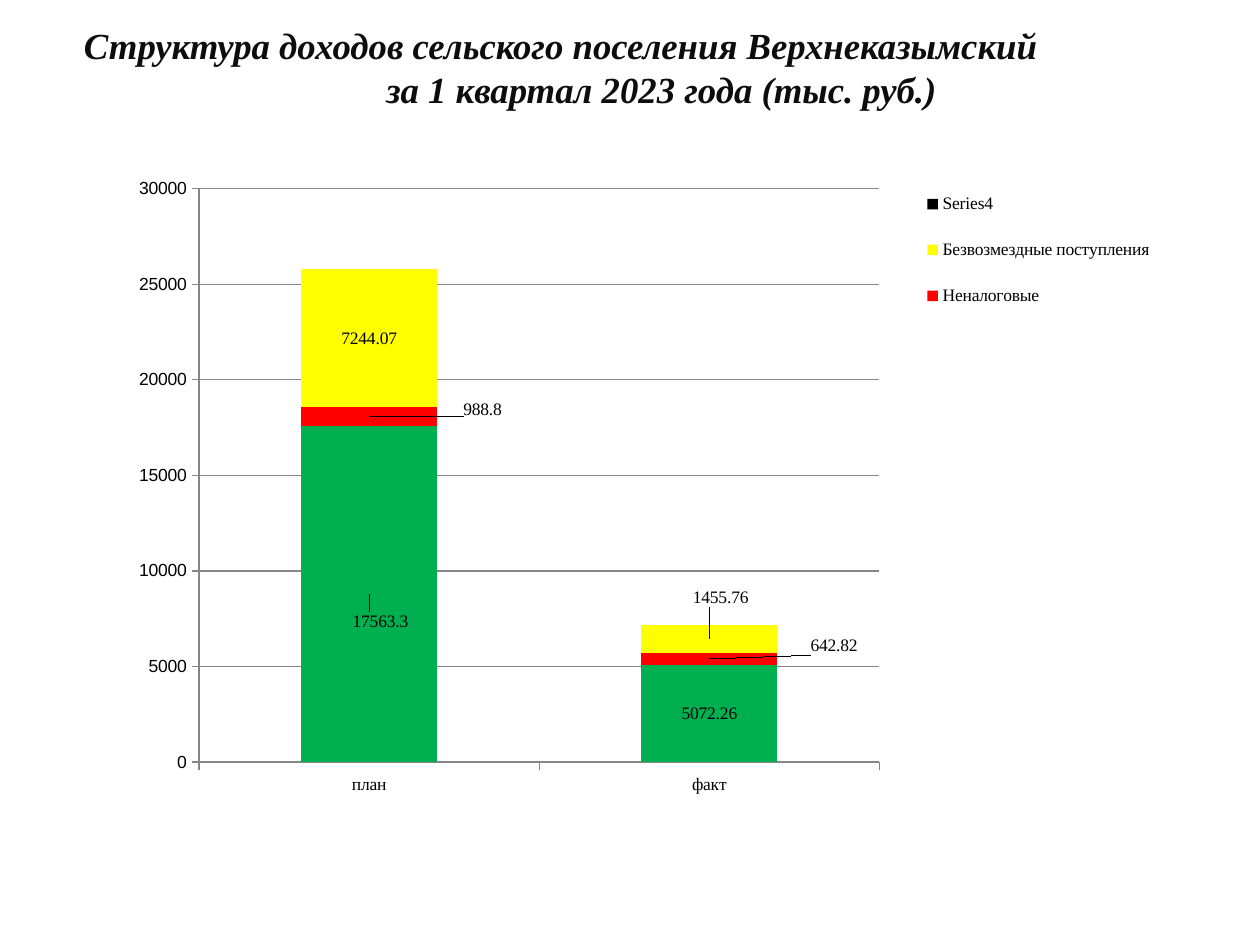
from dataclasses import dataclass, field
from typing import Optional

from lxml.etree import SubElement
from pptx import Presentation
from pptx.chart.data import CategoryChartData
from pptx.dml.color import RGBColor
from pptx.enum.chart import XL_CHART_TYPE as ChartType
from pptx.enum.chart import XL_LABEL_POSITION as LabelPosition
from pptx.enum.chart import XL_LEGEND_POSITION as LegendPosition
from pptx.enum.chart import XL_TICK_MARK as TickMark
from pptx.enum.text import MSO_ANCHOR as Anchor
from pptx.enum.text import PP_ALIGN as Align
from pptx.oxml import parse_xml
from pptx.oxml.ns import nsdecls, qn
from pptx.util import Inches, Pt


@dataclass(frozen=True)
class Theme:
    title: RGBColor = RGBColor(0x0D, 0x0D, 0x0D)
    text: RGBColor = RGBColor(0, 0, 0)
    background: RGBColor = RGBColor(255, 255, 255)
    line: RGBColor = RGBColor(0x86, 0x86, 0x86)
    title_size: Pt = Pt(21)
    chart_size: Pt = Pt(10)
    serif: str = "Times New Roman"
    sans: str = "Arial"


@dataclass(frozen=True)
class TitleLine:
    text: str
    left_margin: float = 0
    right_margin: float = 0


@dataclass(frozen=True)
class IncomeSeries:
    """Values by category; label_shifts maps a point to its label offset."""
    name: str
    values: tuple[Optional[float], ...]
    color: str
    label_shifts: dict[int, tuple[float, float]] = field(default_factory=dict)


THEME = Theme()
CATEGORIES = ("план", "факт")
TITLE_LINES = (
    TitleLine("Структура доходов сельского поселения Верхнеказымский", right_margin=1.1),
    TitleLine("за 1 квартал 2023 года (тыс. руб.)", left_margin=0.5),
)
INCOME = (
    IncomeSeries("Series 1", (17563.3, 5072.26), "00B050", {0: (0.01, 0.04)}),
    IncomeSeries("Неналоговые", (988.8, 642.82), "FF0000",
                 {0: (0.1, -0.01), 1: (0.11, -0.02)}),
    IncomeSeries("Безвозмездные поступления", (7244.07, 1455.76), "FFFF00",
                 {1: (0.01, -0.06)}),
    IncomeSeries("Series4", (None, None), "000000"),
)


def set_font(font, name: str, size: Pt, color: RGBColor) -> None:
    font.name = name
    font.size = size
    font.color.rgb = color


def manual_layout(inner: bool = False, edge: bool = False, **fractions: float):
    """Build a c:layout from fractions of the chart area."""
    layout = parse_xml(f"<c:layout {nsdecls('c')}><c:manualLayout/></c:layout>")
    settings = {"layoutTarget": "inner"} if inner else {}
    if edge:
        settings |= {"xMode": "edge", "yMode": "edge"}
    for tag, value in (settings | fractions).items():
        SubElement(layout[0], qn(f"c:{tag}")).set("val", str(value))
    return layout


def add_title(slide) -> None:
    title = slide.shapes.title
    title.left, title.top = Inches(0.5), Inches(0.21)
    title.width, title.height = Inches(9), Inches(0.64)
    frame = title.text_frame
    frame.word_wrap = True
    frame.vertical_anchor = Anchor.MIDDLE
    for index, line in enumerate(TITLE_LINES):
        paragraph = frame.add_paragraph() if index else frame.paragraphs[0]
        paragraph.alignment = Align.CENTER
        paragraph.space_before = Pt(0)
        properties = paragraph._p.get_or_add_pPr()
        properties.set("marL", str(Inches(line.left_margin)))
        properties.set("marR", str(Inches(line.right_margin)))
        run = paragraph.add_run()
        run.text = line.text
        set_font(run.font, THEME.serif, THEME.title_size, THEME.title)
        run.font.bold = run.font.italic = True


def format_axis(axis, font_name: str) -> None:
    set_font(axis.tick_labels.font, font_name, THEME.chart_size, THEME.text)
    axis.major_tick_mark = TickMark.OUTSIDE
    axis.minor_tick_mark = TickMark.NONE
    axis.format.line.color.rgb = THEME.line
    axis.format.line.width = Pt(0.75)


def format_series(series, income: IncomeSeries) -> None:
    series.format.fill.solid()
    series.format.fill.fore_color.rgb = RGBColor.from_string(income.color)
    if None in income.values:
        return
    labels = series.data_labels
    labels.show_value = True
    labels.position = LabelPosition.CENTER
    set_font(labels.font, THEME.serif, THEME.chart_size, THEME.text)
    for index, (x, y) in income.label_shifts.items():
        label = series.points[index].data_label
        set_font(label.font, THEME.serif, THEME.chart_size, THEME.text)
        label.position = LabelPosition.CENTER
        element = series._element.xpath(f"c:dLbls/c:dLbl[c:idx/@val='{index}']")[0]
        element.insert(1, manual_layout(x=x, y=y))


def format_legend(chart) -> None:
    chart.has_legend = True
    legend = chart.legend
    legend.position = LegendPosition.RIGHT
    legend.include_in_layout = False
    set_font(legend.font, THEME.serif, THEME.chart_size, THEME.text)
    element = legend._element
    for layout in element.findall(qn("c:layout")):
        element.remove(layout)
    hidden_entry = parse_xml(
        f"<c:legendEntry {nsdecls('c')}><c:idx val='0'/><c:delete val='1'/></c:legendEntry>")
    element.insert(1, hidden_entry)
    element.insert(2, manual_layout(edge=True, x=0.74, y=0.01, w=0.24, h=0.24))


def add_income_chart(slide) -> None:
    data = CategoryChartData()
    data.categories = CATEGORIES
    for income in INCOME:
        data.add_series(income.name, income.values)
    chart = slide.shapes.add_chart(
        ChartType.COLUMN_STACKED, Inches(0.5), Inches(1.28), Inches(9), Inches(5.42), data).chart
    chart.has_title = False
    set_font(chart.font, THEME.sans, THEME.chart_size, THEME.text)

    plot = chart.plots[0]
    plot.gap_width, plot.overlap = 150, 100
    plot.vary_by_categories = False
    for series, income in zip(plot.series, INCOME):
        format_series(series, income)

    format_axis(chart.category_axis, THEME.serif)
    values = chart.value_axis
    format_axis(values, THEME.sans)
    values.minimum_scale, values.maximum_scale, values.major_unit = 0, 30000, 5000
    values.has_major_gridlines = True
    values.major_gridlines.format.line.color.rgb = THEME.line
    values.major_gridlines.format.line.width = Pt(0.75)

    plot_area = chart._chartSpace.chart.plotArea
    for layout in plot_area.findall(qn("c:layout")):
        plot_area.remove(layout)
    plot_area.insert(0, manual_layout(inner=True, edge=True, x=0.12, y=0.04, w=0.6, h=0.84))
    format_legend(chart)


def main() -> None:
    presentation = Presentation()
    presentation.slide_width, presentation.slide_height = Inches(10), Inches(7.5)
    slide = presentation.slides.add_slide(presentation.slide_layouts[5])
    slide.background.fill.solid()
    slide.background.fill.fore_color.rgb = THEME.background
    add_title(slide)
    add_income_chart(slide)
    presentation.save("out.pptx")


if __name__ == "__main__":
    main()
